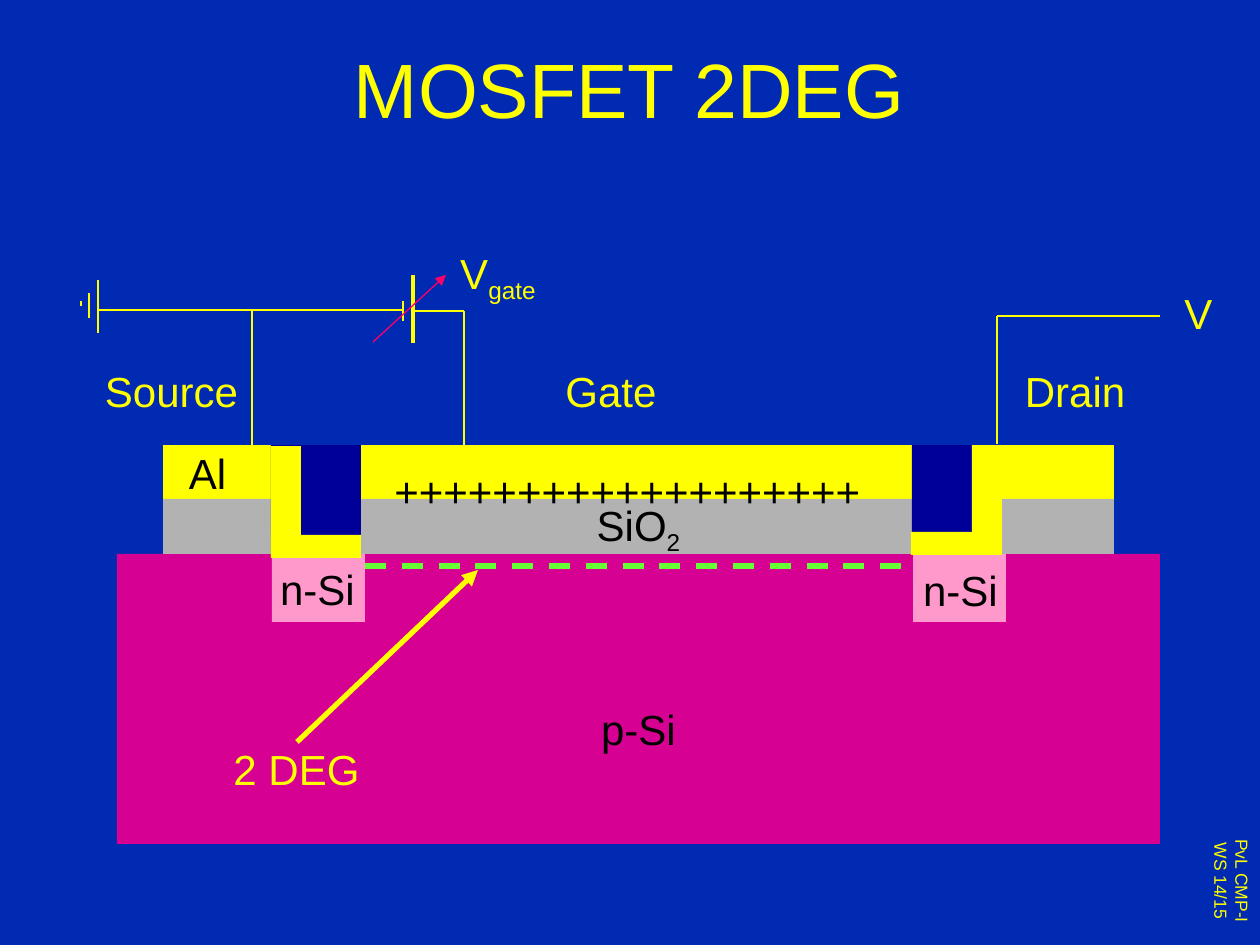
from dataclasses import dataclass

from lxml.etree import SubElement
from pptx import Presentation
from pptx.dml.color import RGBColor
from pptx.enum.dml import MSO_LINE_DASH_STYLE as Dash
from pptx.enum.shapes import MSO_CONNECTOR as Connector, MSO_SHAPE as Shape
from pptx.enum.text import MSO_ANCHOR as Anchor, MSO_AUTO_SIZE as AutoSize, PP_ALIGN as Align
from pptx.oxml.ns import qn
from pptx.slide import Slide
from pptx.util import Pt

EMU_PER_PX = 914400 / 126


@dataclass(frozen=True)
class Theme:
    font: str = "Arial"
    background: str = "002AB2"
    yellow: str = "FFFF00"
    black: str = "000000"
    substrate: str = "D60093"
    oxide: str = "B2B2B2"
    doped: str = "FF99CC"
    well: str = "000099"
    electrons: str = "66FF33"
    variable: str = "FF0066"
    title_size: int = 44
    label_size: int = 24
    footer_size: int = 10
    thin: float = 0.75
    medium: float = 2.25
    thick: float = 3


THEME = Theme()


@dataclass(frozen=True)
class Block:
    left: int
    top: int
    width: int
    height: int
    color: str


@dataclass(frozen=True)
class Wire:
    x1: int
    y1: int
    x2: int
    y2: int
    color: str = THEME.yellow
    weight: float = THEME.thin
    arrow: bool = False
    dashed: bool = False


@dataclass(frozen=True)
class Label:
    text: str
    left: int
    top: int
    width: int
    height: int = 63
    color: str = THEME.yellow
    size: int = THEME.label_size
    subscript: str = ""
    vertical: bool = False
    wrap: bool = False
    anchor: Anchor = Anchor.TOP


BLOCKS = [
    Block(117, 554, 1043, 290, THEME.substrate),
    Block(163, 445, 951, 54, THEME.yellow),
    Block(163, 499, 951, 55, THEME.oxide),
    *(Block(left, 554, 93, 68, THEME.doped) for left in (913, 272)),
    *(Block(left, 445, 90, 110, THEME.well) for left in (271, 912)),
    # L-shaped source and drain contacts
    Block(271, 535, 90, 23, THEME.yellow),
    Block(271, 446, 30, 110, THEME.yellow),
    Block(972, 445, 30, 110, THEME.yellow),
    Block(911, 532, 90, 23, THEME.yellow),
]

WIRES = [
    # Electron gas and its pointer
    Wire(365, 566, 912, 566, THEME.electrons, THEME.thick, dashed=True),
    Wire(297, 742, 478, 570, weight=THEME.thick, arrow=True),
    # Source wiring
    Wire(99, 310, 252, 310),
    Wire(252, 311, 252, 446),
    Wire(242, 310, 403, 310),
    # Gate battery and wiring
    Wire(403, 301, 403, 321),
    Wire(413, 275, 413, 343, weight=THEME.medium),
    Wire(413, 311, 464, 311),
    Wire(464, 311, 464, 446),
    Wire(373, 342, 446, 275, THEME.variable, arrow=True),
    # Drain wiring
    Wire(997, 444, 997, 316),
    Wire(997, 316, 1160, 316),
    # Ground symbol
    Wire(98, 280, 98, 333),
    Wire(89, 293, 89, 318),
    Wire(81, 301, 81, 306),
]

LABELS = [
    Label("MOSFET 2DEG", 94, 9, 1071, 157, size=THEME.title_size,
          wrap=True, anchor=Anchor.MIDDLE),
    Label("SiO", 583, 493, 111, color=THEME.black, subscript="2"),
    Label("p-Si", 588, 697, 101, color=THEME.black),
    Label("n-Si", 910, 558, 101, color=THEME.black),
    Label("n-Si", 267, 557, 101, color=THEME.black),
    Label("Al", 176, 441, 63, color=THEME.black),
    Label("+" * 19, 382, 459, 491, color=THEME.black),
    Label("2 DEG", 221, 737, 151),
    Label("Source", 92, 359, 159),
    Label("Gate", 553, 359, 116),
    Label("Drain", 1012, 359, 126),
    Label("V", 1172, 281, 53),
    Label("V", 444, 241, 108, subscript="gate"),
    Label("PvL CMP-I\nWS 14/15", 1191, 832, 68, 98,
          size=THEME.footer_size, vertical=True),
]


def px(*lengths: int) -> list[int]:
    """Turn pixel lengths into EMU."""
    return [round(length * EMU_PER_PX) for length in lengths]


def rgb(color: str) -> RGBColor:
    return RGBColor.from_string(color)


def draw_block(slide: Slide, block: Block) -> None:
    shape = slide.shapes.add_shape(
        Shape.RECTANGLE, *px(block.left, block.top, block.width, block.height))
    shape.shadow.inherit = False
    shape.fill.solid()
    shape.fill.fore_color.rgb = rgb(block.color)
    shape.line.fill.background()


def draw_wire(slide: Slide, wire: Wire) -> None:
    connector = slide.shapes.add_connector(
        Connector.STRAIGHT, *px(wire.x1, wire.y1, wire.x2, wire.y2))
    line = connector.line
    line.color.rgb = rgb(wire.color)
    line.width = Pt(wire.weight)
    if wire.dashed:
        line.dash_style = Dash.DASH
    properties = connector._element.spPr
    if wire.arrow:
        SubElement(properties.find(qn("a:ln")), qn("a:tailEnd"), type="triangle")
    SubElement(properties, qn("a:effectLst"))


def draw_label(slide: Slide, label: Label) -> None:
    box = slide.shapes.add_textbox(*px(label.left, label.top, label.width, label.height))
    frame = box.text_frame
    frame.text = label.text
    frame.word_wrap = label.wrap
    frame.auto_size = AutoSize.NONE if label.wrap else AutoSize.SHAPE_TO_FIT_TEXT
    frame.vertical_anchor = label.anchor
    if label.vertical:
        frame._txBody.bodyPr.set("vert", "vert")
    if label.subscript:
        run = frame.paragraphs[0].add_run()
        run.text = label.subscript
        run._r.get_or_add_rPr().set("baseline", "-25000")
    for paragraph in frame.paragraphs:
        paragraph.alignment = Align.CENTER
        for run in paragraph.runs:
            run.font.name = THEME.font
            run.font.size = Pt(label.size)
            run.font.color.rgb = rgb(label.color)


def main() -> None:
    presentation = Presentation()
    presentation.slide_width, presentation.slide_height = px(1260, 945)
    slide = presentation.slides.add_slide(presentation.slide_layouts[6])
    slide.background.fill.solid()
    slide.background.fill.fore_color.rgb = rgb(THEME.background)
    for block in BLOCKS:
        draw_block(slide, block)
    for wire in WIRES:
        draw_wire(slide, wire)
    for label in LABELS:
        draw_label(slide, label)
    presentation.save("out.pptx")


if __name__ == "__main__":
    main()
